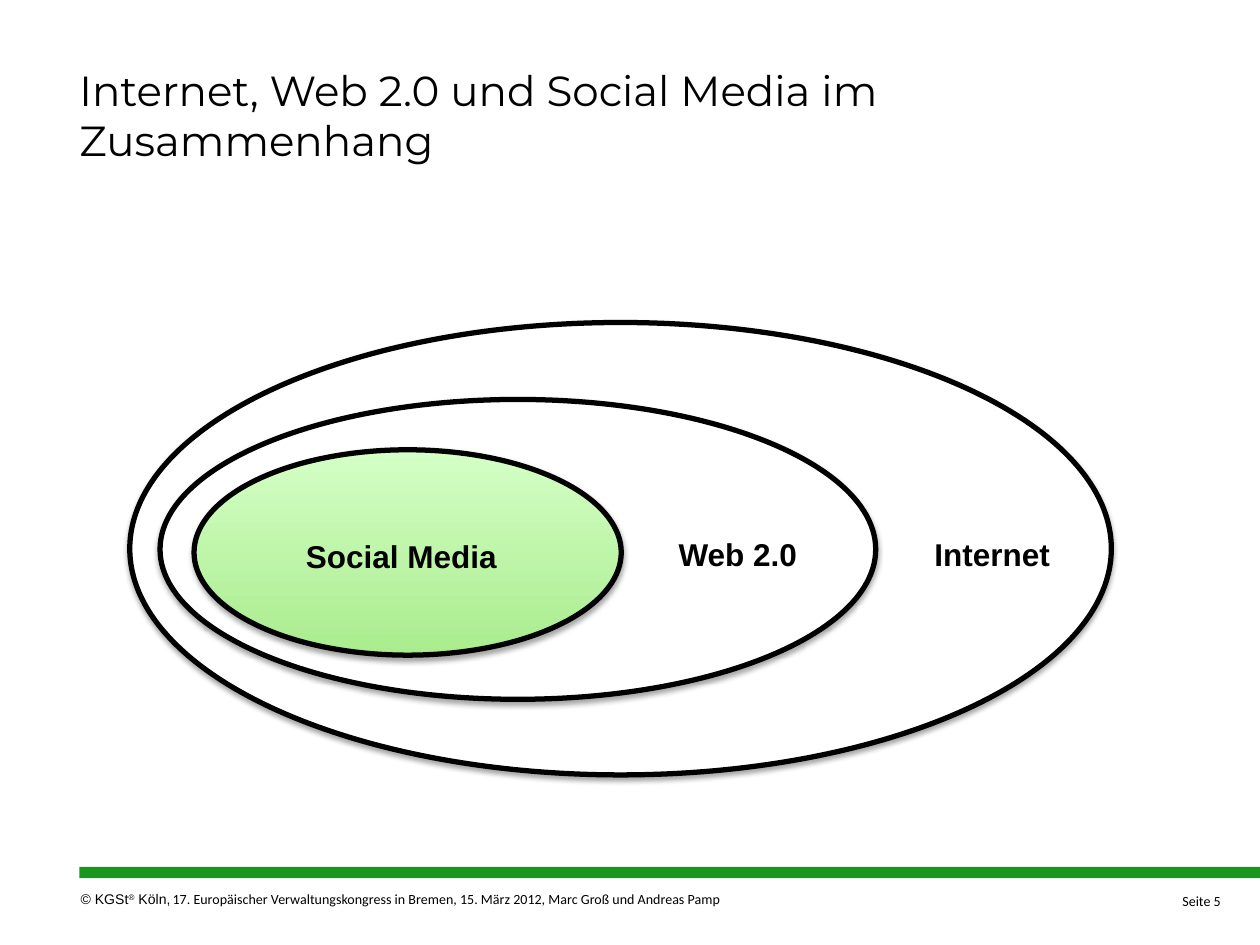
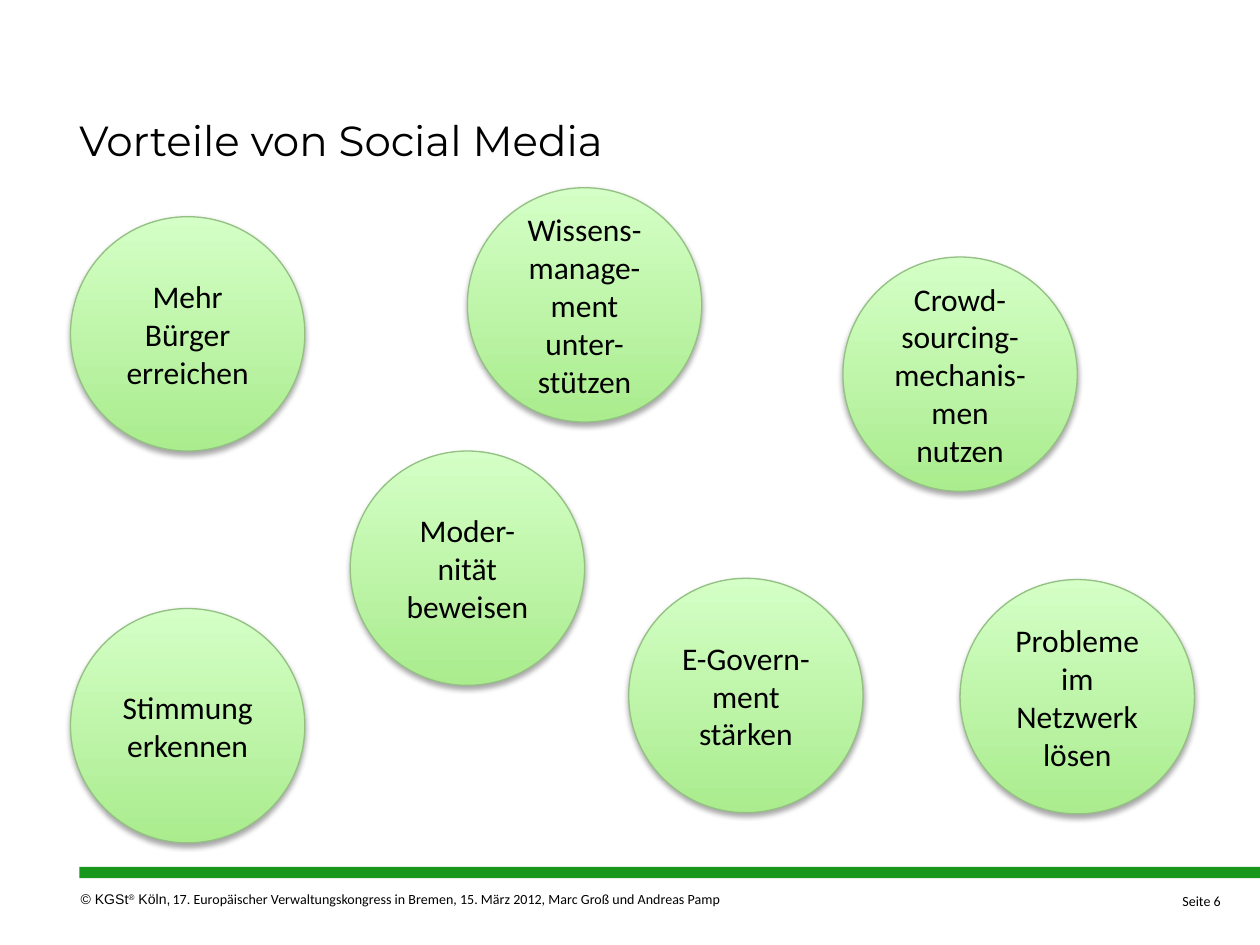
"""Build two slides about social media: nested ellipses and a field of benefit circles."""
from dataclasses import dataclass

from lxml.etree import SubElement
from pptx import Presentation
from pptx.dml.color import RGBColor
from pptx.enum.shapes import MSO_SHAPE
from pptx.enum.text import MSO_ANCHOR as Anchor, MSO_AUTO_SIZE as AutoSize, PP_ALIGN as Align
from pptx.oxml.ns import qn
from pptx.util import Inches, Pt

BLACK, WHITE = "000000", "FFFFFF"
BAND_GREEN, RIM_GREEN = "17981C", "94C083"
GRADIENT = ("AAEC8E", "D4FFC6")
HEAD_FONT, BODY_FONT, LABEL_FONT = "Montserrat", "Calibri", "Arial"
CIRCLE_SIZE = 1.86
EVENT = "17. Europäischer Verwaltungskongress in Bremen, 15. März 2012, Marc Groß und Andreas Pamp"


@dataclass(frozen=True)
class Area:
    left: float
    top: float
    width: float
    height: float

    def lengths(self) -> list:
        return [Inches(value) for value in (self.left, self.top, self.width, self.height)]


@dataclass(frozen=True)
class Ring:
    area: Area
    label: str
    label_area: Area
    shaded: bool = False


@dataclass(frozen=True)
class Benefit:
    left: float
    top: float
    text: str


RINGS = (
    Ring(Area(1.03, 2.56, 7.79, 3.59), "Internet", Area(6.63, 4.2, 2.49, 0.4)),
    Ring(Area(1.27, 3.17, 5.68, 2.38), "Web 2.0", Area(4.61, 4.2, 2.49, 0.4)),
    Ring(Area(1.54, 3.57, 3.39, 1.63), "Social Media", Area(1.94, 4.21, 2.49, 0.4), True),
)
BENEFITS = (
    Benefit(0.56, 1.72, "Mehr Bürger erreichen"),
    Benefit(0.56, 4.83, "Stimmung erkennen"),
    Benefit(2.78, 3.58, "Moder-nität beweisen"),
    Benefit(4.99, 4.59, "E-Govern-ment stärken"),
    Benefit(3.71, 1.49, "Wissens-manage-ment unter-stützen"),
    Benefit(7.62, 4.6, "Probleme im Netzwerk lösen"),
    Benefit(6.69, 2.04, "Crowd-sourcing-mechanis-men nutzen"),
)


def color(hex_code: str) -> RGBColor:
    return RGBColor.from_string(hex_code)


def add_span(para, text: str, font_name: str, size: float, bold: bool = False):
    span = para.add_run()
    span.text = text
    span.font.name, span.font.size, span.font.bold = font_name, Pt(size), bold
    span.font.color.rgb = color(BLACK)
    return span


def set_insets(frame, bottom: float = 0) -> None:
    frame.margin_left = frame.margin_top = frame.margin_right = 0
    frame.margin_bottom = Inches(bottom)


def add_box(page, area: Area, align=Align.LEFT, wrap: bool = True):
    frame = page.shapes.add_textbox(*area.lengths()).text_frame
    frame.word_wrap = wrap
    frame.auto_size = AutoSize.SHAPE_TO_FIT_TEXT
    frame.paragraphs[0].alignment = align
    return frame


def add_footer(page, number: int) -> None:
    band = page.shapes.add_shape(MSO_SHAPE.RECTANGLE, *Area(0.63, 6.88, 9.37, 0.09).lengths())
    band.shadow.inherit = False
    band.fill.solid()
    band.fill.fore_color.rgb = color(BAND_GREEN)
    band.line.fill.background()

    owner = add_box(page, Area(0.64, 7.07, 0.75, 0.18), wrap=False)
    event = add_box(page, Area(1.37, 7.07, 5.59, 0.18))
    counter = add_box(page, Area(7.36, 7.08, 2.33, 0.18), Align.RIGHT)
    for frame in (owner, event, counter):
        set_insets(frame, 0.05)
    add_span(owner.paragraphs[0], "© KGSt", LABEL_FONT, 8)
    mark = add_span(owner.paragraphs[0], "®", LABEL_FONT, 8)
    mark.font._element.set("baseline", "30000")
    add_span(owner.paragraphs[0], " Köln,", LABEL_FONT, 8)
    add_span(event.paragraphs[0], EVENT, BODY_FONT, 8)
    add_span(counter.paragraphs[0], f"Seite {number}", BODY_FONT, 8)


def add_page(deck, heading: str, number: int):
    page = deck.slides.add_slide(deck.slide_layouts[5])
    add_footer(page, number)
    title = page.shapes.title
    title.left, title.top, title.width, title.height = Area(0.63, 0.52, 7.55, 0.79).lengths()
    frame = title.text_frame
    frame.auto_size, frame.word_wrap = AutoSize.NONE, True
    frame.vertical_anchor = Anchor.BOTTOM
    set_insets(frame)
    frame.paragraphs[0].alignment = Align.LEFT
    add_span(frame.paragraphs[0], heading, HEAD_FONT, 24)
    return page


def add_soft_shadow(shape) -> None:
    shape.shadow.inherit = False
    effects = shape._element.spPr.find(qn("a:effectLst"))
    shadow = SubElement(effects, qn("a:outerShdw"), blurRad=str(Pt(3.1)), dist=str(Pt(1.8)),
                        dir="5400000", rotWithShape="0")
    tint = SubElement(shadow, qn("a:srgbClr"), val=BLACK)
    SubElement(tint, qn("a:alpha"), val="35000")


def add_ellipse(page, area: Area, shaded: bool, line_color: str, line_width: float):
    ellipse = page.shapes.add_shape(MSO_SHAPE.OVAL, *area.lengths())
    if shaded:
        ellipse.fill.gradient()
        ellipse.fill.gradient_angle = 90
        for stop, hex_code, position in zip(ellipse.fill.gradient_stops, GRADIENT, (0, 1)):
            stop.color.rgb = color(hex_code)
            stop.position = position
    else:
        ellipse.fill.solid()
        ellipse.fill.fore_color.rgb = color(WHITE)
    ellipse.line.color.rgb = color(line_color)
    ellipse.line.width = Pt(line_width)
    add_soft_shadow(ellipse)
    return ellipse


def build_context_page(deck) -> None:
    page = add_page(deck, "Internet, Web 2.0 und Social Media im Zusammenhang", 5)
    for ring in RINGS:
        add_ellipse(page, ring.area, ring.shaded, BLACK, 3)
    for ring in reversed(RINGS):
        label = add_box(page, ring.label_area, Align.CENTER)
        add_span(label.paragraphs[0], ring.label, LABEL_FONT, 18, True)


def build_benefits_page(deck) -> None:
    page = add_page(deck, "Vorteile von Social Media", 6)
    for benefit in BENEFITS:
        area = Area(benefit.left, benefit.top, CIRCLE_SIZE, CIRCLE_SIZE)
        frame = add_ellipse(page, area, True, RIM_GREEN, 0.75).text_frame
        frame.word_wrap = True
        frame.vertical_anchor = Anchor.MIDDLE
        frame.paragraphs[0].alignment = Align.CENTER
        add_span(frame.paragraphs[0], benefit.text, BODY_FONT, 18)


def main() -> None:
    deck = Presentation()
    deck.slide_width, deck.slide_height = Inches(10), Inches(7.5)
    build_context_page(deck)
    build_benefits_page(deck)
    deck.save("out.pptx")


if __name__ == "__main__":
    main()
